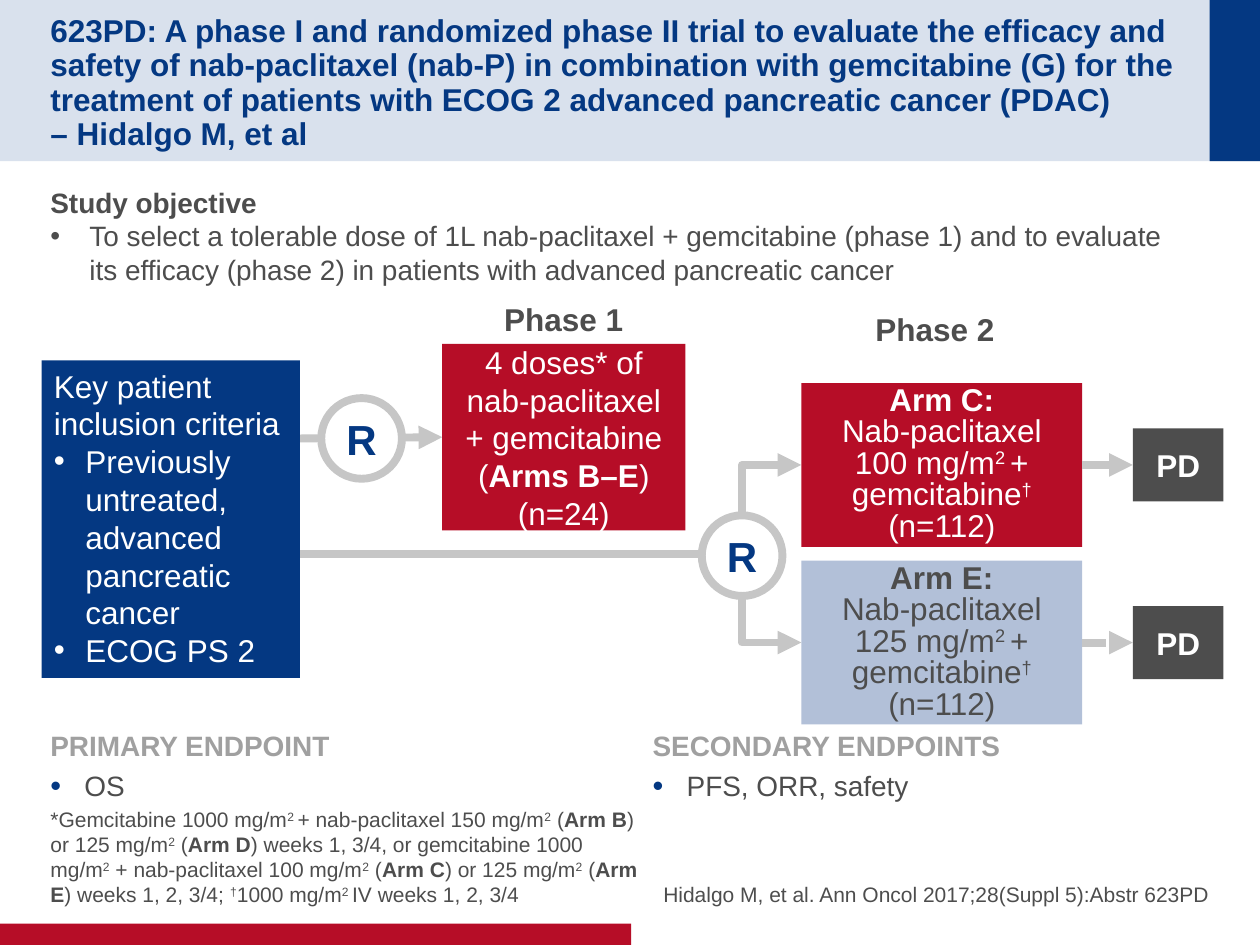
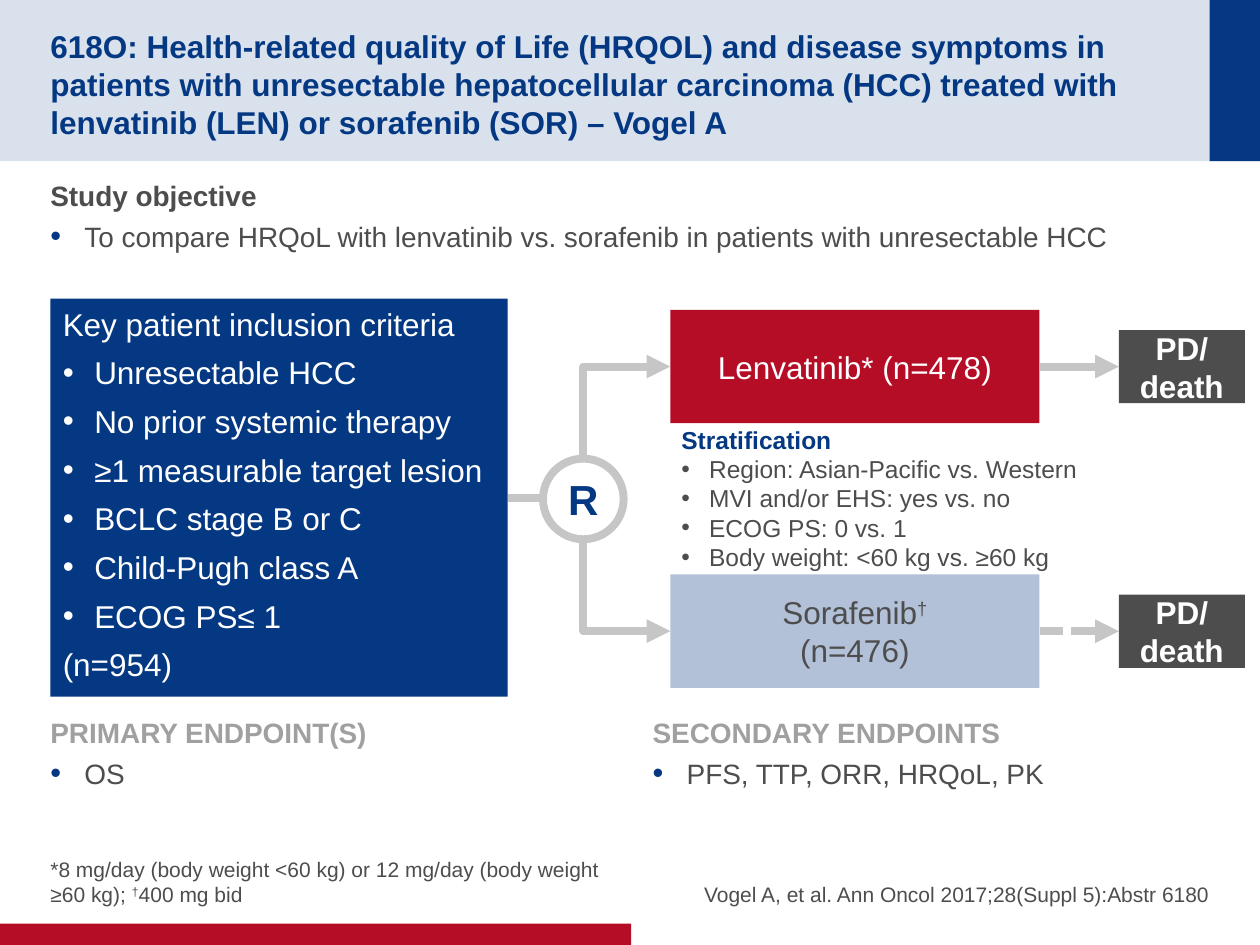
from lxml import etree
from pptx import Presentation
from pptx.dml.color import RGBColor
from pptx.enum.dml import MSO_LINE
from pptx.enum.shapes import MSO_CONNECTOR, MSO_SHAPE
from pptx.enum.text import MSO_ANCHOR, MSO_AUTO_SIZE, PP_ALIGN
from pptx.oxml.ns import qn
from pptx.util import Inches, Pt

RECTANGLE, OVAL = MSO_SHAPE.RECTANGLE, MSO_SHAPE.OVAL
STRAIGHT, ELBOW = MSO_CONNECTOR.STRAIGHT, MSO_CONNECTOR.ELBOW
LEFT, CENTER, RIGHT = PP_ALIGN.LEFT, PP_ALIGN.CENTER, PP_ALIGN.RIGHT
TOP, MIDDLE, BOTTOM = MSO_ANCHOR.TOP, MSO_ANCHOR.MIDDLE, MSO_ANCHOR.BOTTOM
DOTTED = MSO_LINE.SQUARE_DOT

FONT = "Arial"
COLORS = {
    "navy": "043882",
    "pale": "D9E1ED",
    "red": "B60D27",
    "light blue": "B2C0D8",
    "dark grey": "4D4D4D",
    "heading grey": "A0A0A0",
    "line grey": "C6C6C6",
    "white": "FFFFFF",
}
COMPARISON_LAYOUT = 5 - 1
FOOTNOTE, PRIMARY, REFERENCE, SECONDARY = 1, 2, 3, 4
MARGIN = 0.4
RIGHT_COLUMN = 5.08
RING = 0.64
PLAIN_INSETS = (0, 0.05, 0, 0.05)
BOX_INSETS = (0.1, 0, 0.1, 0)
TEXT_INSETS = (0.1, 0.05, 0.1, 0.05)


def rgb(name):
    return RGBColor.from_string(COLORS[name])


def add_bullet(paragraph, indent, color):
    properties = paragraph._p.get_or_add_pPr()
    properties.set("marL", str(Inches(indent)))
    properties.set("indent", str(-Inches(indent)))
    if color:
        holder = etree.SubElement(properties, qn("a:buClr"))
        etree.SubElement(holder, qn("a:srgbClr"), val=COLORS[color])
        etree.SubElement(properties, qn("a:buSzPct"), val="110000")
    etree.SubElement(properties, qn("a:buFont"), typeface=FONT)
    etree.SubElement(properties, qn("a:buChar"), char="•")


def remove_bullet(paragraph):
    properties = paragraph._p.get_or_add_pPr()
    properties.set("marL", "0")
    properties.set("indent", "0")
    etree.SubElement(properties, qn("a:buNone"))


def add_runs(paragraph, text, size, color, bold):
    """Add text in which _ switches bold, ^ superscript, and a newline breaks the line."""
    for bold_index, bold_part in enumerate(text.split("_")):
        for raised_index, part in enumerate(bold_part.split("^")):
            for line_index, line in enumerate(part.split("\n")):
                if line_index:
                    paragraph.add_line_break()
                if not line:
                    continue
                run = paragraph.add_run()
                run.text = line
                font = run.font
                font.name, font.size = FONT, Pt(size)
                font.bold = bold != (bold_index % 2 == 1)
                font.color.rgb = rgb(color)
                if raised_index % 2:
                    font._element.set("baseline", "30000")


def write(shape, *texts, size=18, color="dark grey", heading=None, bold=False,
          align=LEFT, anchor=TOP, insets=TEXT_INSETS, indent=0.27,
          bullet_color=None, after=0, spacing=1.0, wrap=True):
    """Write one paragraph per text; a leading • makes it a list item."""
    frame = shape.text_frame
    frame.auto_size = MSO_AUTO_SIZE.NONE
    frame.word_wrap = wrap
    frame.vertical_anchor = anchor
    (frame.margin_left, frame.margin_top,
     frame.margin_right, frame.margin_bottom) = map(Inches, insets)
    for index, text in enumerate(texts):
        paragraph = frame.add_paragraph() if index else frame.paragraphs[0]
        paragraph.alignment = align
        paragraph.line_spacing = spacing
        paragraph.space_before, paragraph.space_after = Pt(0), Pt(after)
        if text.startswith("•"):
            add_bullet(paragraph, indent, bullet_color)
        else:
            remove_bullet(paragraph)
        is_heading = heading and index == 0
        add_runs(paragraph, text.lstrip("•"), size,
                 heading if is_heading else color, bold or bool(is_heading))


class Deck:
    """Holds the presentation, its shared style and the current slide."""

    def __init__(self):
        self.presentation = Presentation()
        self.presentation.slide_width = Inches(10)
        self.presentation.slide_height = Inches(7.5)
        self.layout = self.presentation.slide_layouts[COMPARISON_LAYOUT]
        self.slide = None
        self.has_bands = False

    def add_slide(self, title, spacing=1.0):
        self.slide = self.presentation.slides.add_slide(self.layout)
        if not self.has_bands:
            self.add_bands()
        self.place(self.slide.shapes.title, MARGIN, 0.2, 9.01, 0.88)
        write(self.slide.shapes.title, title, color="navy", bold=True,
              anchor=MIDDLE, insets=(0, 0.05, 0, 0), spacing=spacing)

    def add_bands(self):
        """Draw the header and footer bands and move them into the layout."""
        bands = [("pale", 0, 0, 10, 1.28), ("navy", 9.6, 0, 0.4, 1.28),
                 ("red", 0, 7.33, 5.01, 0.17)]
        tree = self.layout.shapes.element
        for index, (fill, *box) in enumerate(bands):
            band = self.add_shape(box, fill)
            band.element.nvSpPr.cNvPr.id = 100 + index
            tree.insert(2 + index, band.element)
        self.has_bands = True

    @staticmethod
    def place(shape, *box):
        shape.left, shape.top, shape.width, shape.height = map(Inches, box)

    def add_shape(self, box, fill, kind=RECTANGLE, line=None):
        shape = self.slide.shapes.add_shape(kind, *map(Inches, box))
        shape.shadow.inherit = False
        shape.fill.solid()
        shape.fill.fore_color.rgb = rgb(fill)
        if line:
            shape.line.color.rgb = rgb(line)
            shape.line.width = Pt(4.5)
        else:
            shape.line.fill.background()
        return shape

    def add_text(self, box, *texts, **style):
        write(self.slide.shapes.add_textbox(*map(Inches, box)), *texts, **style)

    def fill_placeholder(self, index, box, *texts, **style):
        placeholder = self.slide.placeholders[index]
        self.place(placeholder, *box)
        write(placeholder, *texts, **style)

    def add_box(self, box, fill, *texts, color="white", **style):
        write(self.add_shape(box, fill), *texts, color=color, align=CENTER,
              anchor=MIDDLE, insets=BOX_INSETS, **style)

    def add_criteria(self, box, *texts, after=0):
        write(self.add_shape(box, "navy"), *texts, color="white",
              indent=0.25, after=after)

    def add_ring(self, left, top):
        ring = self.add_shape((left, top, RING, RING), "white", OVAL, "line grey")
        write(ring, "R", size=24, color="navy", bold=True, align=CENTER,
              anchor=MIDDLE, wrap=False)

    def add_line(self, start, end, kind=STRAIGHT, arrow_at=None, dash=None):
        """Draw a line; arrow_at is headEnd (start), tailEnd (end) or None."""
        connector = self.slide.shapes.add_connector(
            kind, *map(Inches, (*start, *end)))
        connector.line.color.rgb = rgb("line grey")
        connector.line.width = Pt(4.5)
        if dash:
            connector.line.dash_style = dash
        if arrow_at:
            etree.SubElement(connector.line._get_or_add_ln(),
                             qn(f"a:{arrow_at}"), type="triangle")
        etree.SubElement(connector.element.spPr, qn("a:effectLst"))
        return connector

    def add_arrow(self, start, end, dash=None):
        self.add_line(start, end, arrow_at="tailEnd", dash=dash)

    def add_branch(self, start, end):
        """Draw a one-corner arrow that leaves vertically and arrives sideways."""
        branch = self.add_line(end, start, ELBOW, arrow_at="headEnd")
        branch.element.spPr.prstGeom.set("prst", "bentConnector2")

    def add_randomization(self, left, top, arm_left, arm_middles):
        center = left + RING / 2
        for start, middle in zip((top, top + RING), arm_middles):
            self.add_branch((center, start), (arm_left, middle))
        self.add_ring(left, top)

    def add_outcomes(self, text, arm_right, left, width, middles):
        """Draw one end box per arm; the arrow of the second arm is dotted."""
        for middle, dash in zip(middles, (None, DOTTED)):
            self.add_arrow((arm_right, middle), (left, middle), dash)
            self.add_box((left, middle - 0.29, width, 0.58), "dark grey",
                         text, bold=True)

    def add_endpoints(self, top, primary_heading, primary, secondary):
        style = dict(size=16, heading="heading grey", bullet_color="navy", after=4)
        self.fill_placeholder(PRIMARY, (MARGIN, top, 4.52, 0.87),
                              primary_heading, primary, insets=PLAIN_INSETS, **style)
        self.fill_placeholder(SECONDARY, (RIGHT_COLUMN, top, 4.52, 0.87),
                              "SECONDARY ENDPOINTS", secondary, **style)

    def add_footer(self, footnote, footnote_width, reference):
        style = dict(size=12, anchor=BOTTOM, insets=(0, 0, 0, 0), after=4)
        self.fill_placeholder(FOOTNOTE, (MARGIN, 6.67, footnote_width, 0.53),
                              footnote, **style)
        self.fill_placeholder(REFERENCE, (RIGHT_COLUMN, 6.67, 4.52, 0.53),
                              reference, align=RIGHT, **style)


def add_pancreatic_trial(deck):
    deck.add_slide(
        "623PD: A phase I and randomized phase II trial to evaluate the efficacy and "
        "safety of nab-paclitaxel (nab-P) in combination with gemcitabine (G) for the "
        "treatment of patients with ECOG 2 advanced pancreatic cancer (PDAC) \n"
        "– Hidalgo M, et al", spacing=0.9)
    deck.add_text(
        (MARGIN, 1.42, 9.19, 1.21), "Study objective",
        "•To select a tolerable dose of 1L nab-paclitaxel + gemcitabine (phase 1) and "
        "to evaluate its efficacy (phase 2) in patients with advanced pancreatic cancer",
        size=16, heading="dark grey", indent=0.31, insets=(0, 0.05, 0.1, 0.05))

    deck.add_arrow((2.37, 3.48), (3.51, 3.47))
    deck.add_line((2.37, 4.4), (5.56, 4.4))
    deck.add_criteria((0.33, 2.86, 2.05, 2.52), "Key patient inclusion criteria",
                      "•Previously untreated, advanced pancreatic cancer", "•ECOG PS 2")
    deck.add_ring(2.55, 3.16)
    for phase, box in (("Phase 1", (3.51, 2.33, 1.93, 0.4)),
                       ("Phase 2", (6.36, 2.41, 2.12, 0.4))):
        deck.add_text(box, phase, bold=True, align=CENTER)
    deck.add_box((3.51, 2.73, 1.93, 1.48), "red",
                 "4 doses* of nab-paclitaxel + gemcitabine (_Arms B–E_) (n=24)")

    arm_middles = (3.69, 5.1)
    deck.add_randomization(5.57, 4.09, 6.36, arm_middles)
    arms = (("C", 100, "red", "white"), ("E", 125, "light blue", "dark grey"))
    for middle, (arm, dose, fill, color) in zip(arm_middles, arms):
        deck.add_box((6.36, middle - 0.65, 2.23, 1.3), fill, f"_Arm {arm}:_",
                     f"Nab-paclitaxel {dose} mg/m^2 ^+ gemcitabine^†^", "(n=112)",
                     color=color, spacing=Pt(18))
    deck.add_outcomes("PD", 8.59, 8.99, 0.72, arm_middles)

    deck.add_endpoints(5.73, "PRIMARY ENDPOINT", "•OS", "•PFS, ORR, safety")
    deck.add_footer(
        "*Gemcitabine 1000 mg/m^2 ^+ nab-paclitaxel 150 mg/m^2^ (_Arm B_) or "
        "125 mg/m^2^ (_Arm D_) weeks 1, 3/4, or gemcitabine 1000 mg/m^2^ + "
        "nab-paclitaxel 100 mg/m^2^ (_Arm C_) or 125 mg/m^2^ (_Arm E_) "
        "weeks 1, 2, 3/4; ^†^1000 mg/m^2 ^IV weeks 1, 2, 3/4",
        4.74, "Hidalgo M, et al. Ann Oncol 2017;28(Suppl 5):Abstr 623PD")


def add_hepatocellular_trial(deck):
    deck.add_slide(
        "618O: Health-related quality of Life (HRQOL) and disease symptoms in patients "
        "with unresectable hepatocellular carcinoma (HCC) treated with lenvatinib (LEN) "
        "or sorafenib (SOR) – Vogel A")
    deck.add_text(
        (MARGIN, 1.37, 9.2, 0.8), "Study objective",
        "•To compare HRQoL with lenvatinib vs. sorafenib in patients with "
        "unresectable HCC", size=16, heading="dark grey", bullet_color="navy",
        after=4, insets=PLAIN_INSETS)

    deck.add_criteria(
        (MARGIN, 2.37, 3.63, 3.16), "Key patient inclusion criteria",
        "•Unresectable HCC", "•No prior systemic therapy",
        "•≥1 measurable target lesion", "•BCLC stage B or C", "•Child-Pugh class A",
        "•ECOG PS≤ 1", "(n=954)", after=6.2)
    deck.add_line((4.03, 3.95), (4.31, 3.95))

    arm_middles = (2.91, 5.01)
    deck.add_randomization(4.31, 3.64, 5.32, arm_middles)
    arms = ((("Lenvatinib* (n=478)",), "red", "white"),
            (("Sorafenib^†^", "(n=476)"), "light blue", "dark grey"))
    for middle, (texts, fill, color) in zip(arm_middles, arms):
        deck.add_box((5.32, middle - 0.45, 2.93, 0.9), fill, *texts, color=color)
    deck.add_text(
        (5.31, 3.32, 4.84, 0.98), "Stratification",
        "•Region: Asian-Pacific vs. Western", "•MVI and/or EHS: yes vs. no",
        "•ECOG PS: 0 vs. 1", "•Body weight: <60 kg vs. ≥60 kg",
        size=14, heading="navy", indent=0.22)
    deck.add_outcomes("PD/\ndeath", 8.25, 8.88, 1, arm_middles)

    deck.add_endpoints(5.63, "PRIMARY ENDPOINT(S)", "•OS", "•PFS, TTP, ORR, HRQoL, PK")
    deck.add_footer(
        "*8 mg/day (body weight <60 kg) or 12 mg/day (body weight ≥60 kg); "
        "^†^400 mg bid", 4.58, "Vogel A, et al. Ann Oncol 2017;28(Suppl 5):Abstr 6180")


def main():
    deck = Deck()
    add_pancreatic_trial(deck)
    add_hepatocellular_trial(deck)
    deck.presentation.save("out.pptx")


if __name__ == "__main__":
    main()
